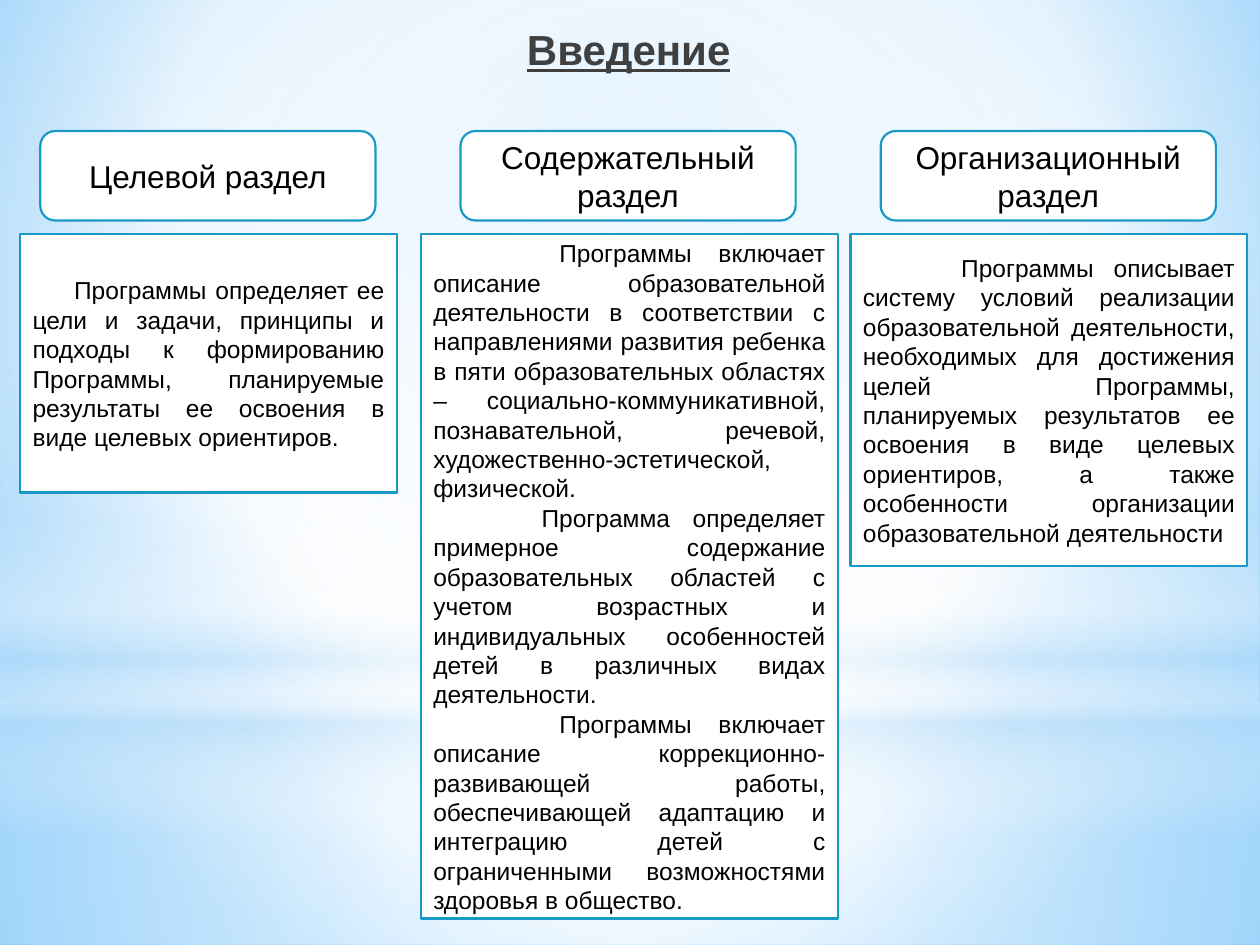
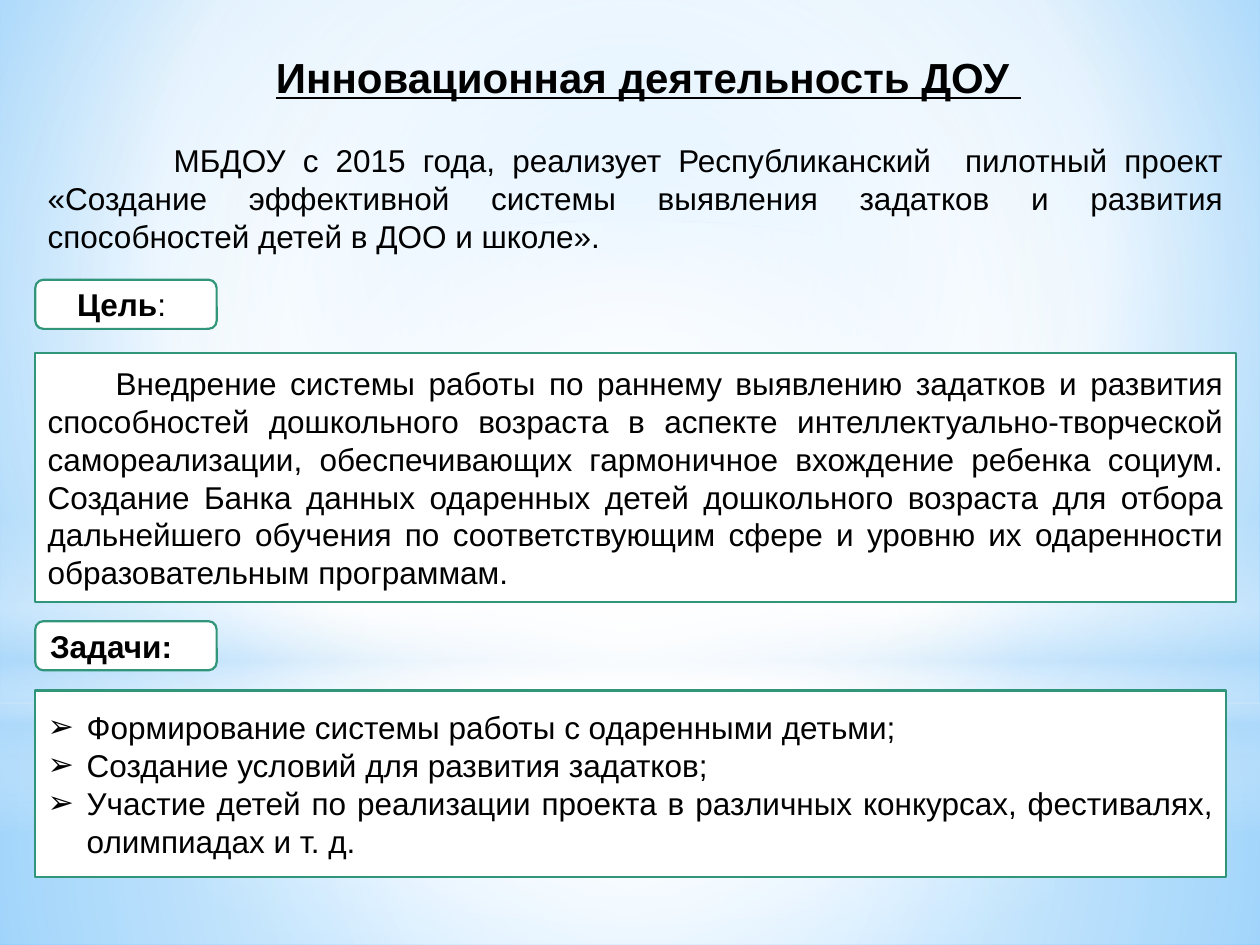
import copy

import lxml.etree
import pptx
import pptx.dml.color
import pptx.enum.shapes
import pptx.enum.text
import pptx.oxml.ns
import pptx.util

ALIGN = pptx.enum.text.PP_ALIGN
ANCHOR = pptx.enum.text.MSO_ANCHOR
SHAPE = pptx.enum.shapes.MSO_SHAPE

# The slide is a grid of 100 columns and 75 rows.
COLUMNS, ROWS = 100, 75

COLOURS = {
    "paper": "FFFFFF",
    "text": "000000",
    "heading": "404040",
    "blue": "1999C6",
    "green": "31957A",
    "sky": "9ED5FF",
    "deep sky": "5BB9FF",
    "haze": "B4DCFA",
}

FONTS = {
    "title": {"name": "Arial", "size": pptx.util.Pt(24), "bold": True, "underline": True},
    "large": {"name": "Arial", "size": pptx.util.Pt(18), "bold": False},
    "label": {"name": "Arial", "size": pptx.util.Pt(18), "bold": True},
    "small": {"name": "Arial", "size": pptx.util.Pt(14), "bold": False},
}

FRAMES = {
    "title": {"word_wrap": False, "vertical_anchor": ANCHOR.TOP,
              "auto_size": pptx.enum.text.MSO_AUTO_SIZE.NONE},
    "plain": {"word_wrap": True, "vertical_anchor": ANCHOR.TOP},
    "box": {"word_wrap": True, "vertical_anchor": ANCHOR.MIDDLE},
}

CENTRE = (50, 50, 50, 50)
SKY = ([(0, "sky", 100), (60, "paper", 100), (100, "deep sky", 100)], (20, 10, 20, 60))

# Each layer: preset, place on the grid, gradient stops, focus (None: top to bottom).
BACKDROP = [
    (SHAPE.RECTANGLE, (0, 55.8, 100, 19.2),
     [(0, "paper", 91), (37, "paper", 76), (100, "haze", 79)], CENTRE),
    (SHAPE.RECTANGLE, (0, 0, 100, 55.8),
     [(0, "paper", 89), (48, "paper", 62), (100, "haze", 79)], CENTRE),
    (SHAPE.RECTANGLE, (0, 41.2, 100, 25),
     [(0, "paper", 0), (29, "paper", 30), (45, "haze", 40), (55, "paper", 26),
      (65, "haze", 60), (100, "paper", 0)], None),
    (SHAPE.OVAL, (0, 17.5, 100, 55.8),
     [(0, "paper", 100), (56, "paper", 0)], CENTRE),
]

# Each section: heading, place of its text box, paragraphs with first-line indents.
SECTIONS = [
    ("Целевой раздел", (1.6, 18.6, 29.9, 20.5), [
        ("Программы определяет ее цели и задачи, принципы и подходы к формированию "
         "Программы, планируемые результаты ее освоения в виде целевых ориентиров.", 3.3),
    ]),
    ("Содержательный раздел", (33.4, 18.6, 33.1, 54.3), [
        ("Программы включает описание образовательной деятельности в соответствии с "
         "направлениями развития ребенка в пяти образовательных областях – "
         "социально-коммуникативной, познавательной, речевой, "
         "художественно-эстетической, физической.", 10),
        ("Программа определяет примерное содержание образовательных областей с учетом "
         "возрастных и индивидуальных особенностей детей в различных видах "
         "деятельности.", 8.6),
        ("Программы включает описание коррекционно-развивающей работы, обеспечивающей "
         "адаптацию и интеграцию детей с ограниченными возможностями здоровья в "
         "общество.", 10),
    ]),
    ("Организационный раздел", (67.5, 18.6, 31.5, 26.3), [
        ("Программы описывает систему условий реализации образовательной деятельности, "
         "необходимых для достижения целей Программы, планируемых результатов ее "
         "освоения в виде целевых ориентиров, а также особенности организации "
         "образовательной деятельности", 7.8),
    ]),
]

PROJECT = ("МБДОУ с 2015 года, реализует Республиканский  пилотный проект «Создание "
           "эффективной системы выявления задатков и развития способностей детей в ДОО "
           "и школе».")
GOAL = ("Внедрение системы работы по раннему выявлению задатков и развития способностей "
        "дошкольного возраста в аспекте интеллектуально-творческой самореализации, "
        "обеспечивающих гармоничное вхождение ребенка социум. Создание Банка данных "
        "одаренных детей дошкольного возраста для отбора дальнейшего обучения по "
        "соответствующим сфере и уровню их одаренности образовательным программам.")
TASKS = [
    "Формирование системы работы с одаренными детьми;",
    "Создание условий для развития задатков;",
    "Участие детей по реализации проекта в различных конкурсах, фестивалях, "
    "олимпиадах и т. д.",
]


def colour(name):
    return pptx.dml.color.RGBColor.from_string(COLOURS[name])


def apply(target, values):
    for name, value in values.items():
        setattr(target, name, value)


def add_element(parent, tag, **attributes):
    element = lxml.etree.SubElement(parent, pptx.oxml.ns.qn(tag))
    for name, value in attributes.items():
        element.set(name, str(value))
    return element


def set_gradient(fill, owner, stops, focus):
    """Replace the fill inside the XML element owner by a gradient."""
    fill.solid()
    solid = owner.find(".//" + pptx.oxml.ns.qn("a:solidFill"))
    gradient = copy.deepcopy(solid)
    gradient.tag = pptx.oxml.ns.qn("a:gradFill")
    for child in list(gradient):
        gradient.remove(child)
    stop_list = add_element(gradient, "a:gsLst")
    for position, name, opacity in stops:
        stop = add_element(stop_list, "a:gs", pos=position * 1000)
        hue = add_element(stop, "a:srgbClr", val=COLOURS[name])
        if opacity < 100:
            add_element(hue, "a:alpha", val=opacity * 1000)
    if focus:
        route = add_element(gradient, "a:path", path="circle")
        sides = {side: share * 1000 for side, share in zip("ltrb", focus)}
        add_element(route, "a:fillToRect", **sides)
    else:
        add_element(gradient, "a:lin", ang=90 * 60000, scaled=0)
    solid.getparent().replace(solid, gradient)


class SlideBuilder:
    """Holds the deck, its style and the slide being built."""

    def __init__(self):
        self.deck = pptx.Presentation()
        self.deck.slide_width = pptx.util.Inches(10)
        self.deck.slide_height = pptx.util.Inches(7.5)
        self.page = None
        self.accent = None

    def across(self, columns):
        return round(self.deck.slide_width * columns / COLUMNS)

    def down(self, rows):
        return round(self.deck.slide_height * rows / ROWS)

    def place(self, column, row, columns, rows):
        return self.across(column), self.down(row), self.across(columns), self.down(rows)

    def start(self, accent):
        self.page = self.deck.slides.add_slide(self.deck.slide_layouts[5])
        self.accent = accent

    def backdrop(self):
        """Move the shared background layers to the master, under its placeholders."""
        master = self.deck.slide_master
        set_gradient(master.background.fill, master.element, *SKY)
        for index, (preset, place, stops, focus) in enumerate(BACKDROP):
            layer = self.page.shapes.add_shape(preset, *self.place(*place))
            layer.shadow.inherit = False
            layer.line.fill.background()
            set_gradient(layer.fill, layer.element, stops, focus)
            master.shapes.element.insert(2 + index, layer.element)

    def add_span(self, para, text, style, ink="text"):
        span = para.add_run()
        span.text = text
        apply(span.font, FONTS[style])
        span.font.color.rgb = colour(ink)

    def title(self, text, place, align, ink):
        box = self.page.shapes.title
        apply(box, dict(zip(("left", "top", "width", "height"), self.place(*place))))
        apply(box.text_frame, FRAMES["title"])
        para = box.text_frame.paragraphs[0]
        para.alignment = align
        self.add_span(para, text, "title", ink)

    def box(self, place, preset=SHAPE.RECTANGLE):
        box = self.page.shapes.add_shape(preset, *self.place(*place))
        box.shadow.inherit = False
        box.fill.solid()
        box.fill.fore_color.rgb = colour("paper")
        box.line.color.rgb = colour(self.accent)
        box.line.width = pptx.util.Pt(1.25)
        apply(box.text_frame, FRAMES["box"])
        return box.text_frame

    def label(self, place, spans, align=ALIGN.CENTER):
        para = self.box(place, SHAPE.ROUNDED_RECTANGLE).paragraphs[0]
        para.alignment = align
        for text, style in spans:
            self.add_span(para, text, style)

    def justify(self, frame, paragraphs, style, bullet=None):
        """Fill frame with (text, indent) pairs; a bullet hangs by the indent."""
        for index, (text, indent) in enumerate(paragraphs):
            para = frame.add_paragraph() if index else frame.paragraphs[0]
            para.alignment = ALIGN.JUSTIFY
            self.add_span(para, text, style)
            properties = para._p.get_or_add_pPr()
            width = self.across(indent)
            properties.set("indent", str(-width if bullet else width))
            if bullet:
                properties.set("marL", str(width))
                add_element(properties, "a:buFont", typeface="Arial")
                add_element(properties, "a:buChar", char=bullet)

    def text(self, place, paragraphs, style):
        box = self.page.shapes.add_textbox(*self.place(*place))
        apply(box.text_frame, FRAMES["plain"])
        self.justify(box.text_frame, paragraphs, style)


def build_introduction(builder):
    builder.start("blue")
    builder.backdrop()
    builder.title("Введение", (14.3, 1.4, 71.2, 12.5), ALIGN.CENTER, "heading")
    for index, (heading, place, paragraphs) in enumerate(SECTIONS):
        builder.label((3.2 + 33.35 * index, 10.4, 26.6, 7.1), [(heading, "large")])
        builder.justify(builder.box(place), paragraphs, "small")


def build_innovation(builder):
    left = 2.8
    builder.start("green")
    builder.title("Инновационная деятельность ДОУ ", (20.9, 3.6, 61.7, 5), ALIGN.LEFT, "text")
    builder.text((left, 10.7, 95.3, 10), [(PROJECT, 10)], "large")
    builder.label((left, 22.2, 14.4, 3.9), [("Цель", "label"), (": ", "large")])
    builder.justify(builder.box((left, 28, 95.3, 19.8)), [(GOAL, 5.4)], "large")
    builder.label((left, 49.3, 14.4, 3.9), [("Задачи:", "label")], ALIGN.LEFT)
    tasks = [(task, 3.1) for task in TASKS]
    builder.justify(builder.box((left, 54.8, 94.5, 14.8)), tasks, "large", "➢")


def main():
    builder = SlideBuilder()
    build_introduction(builder)
    build_innovation(builder)
    builder.deck.save("out.pptx")


if __name__ == "__main__":
    main()
